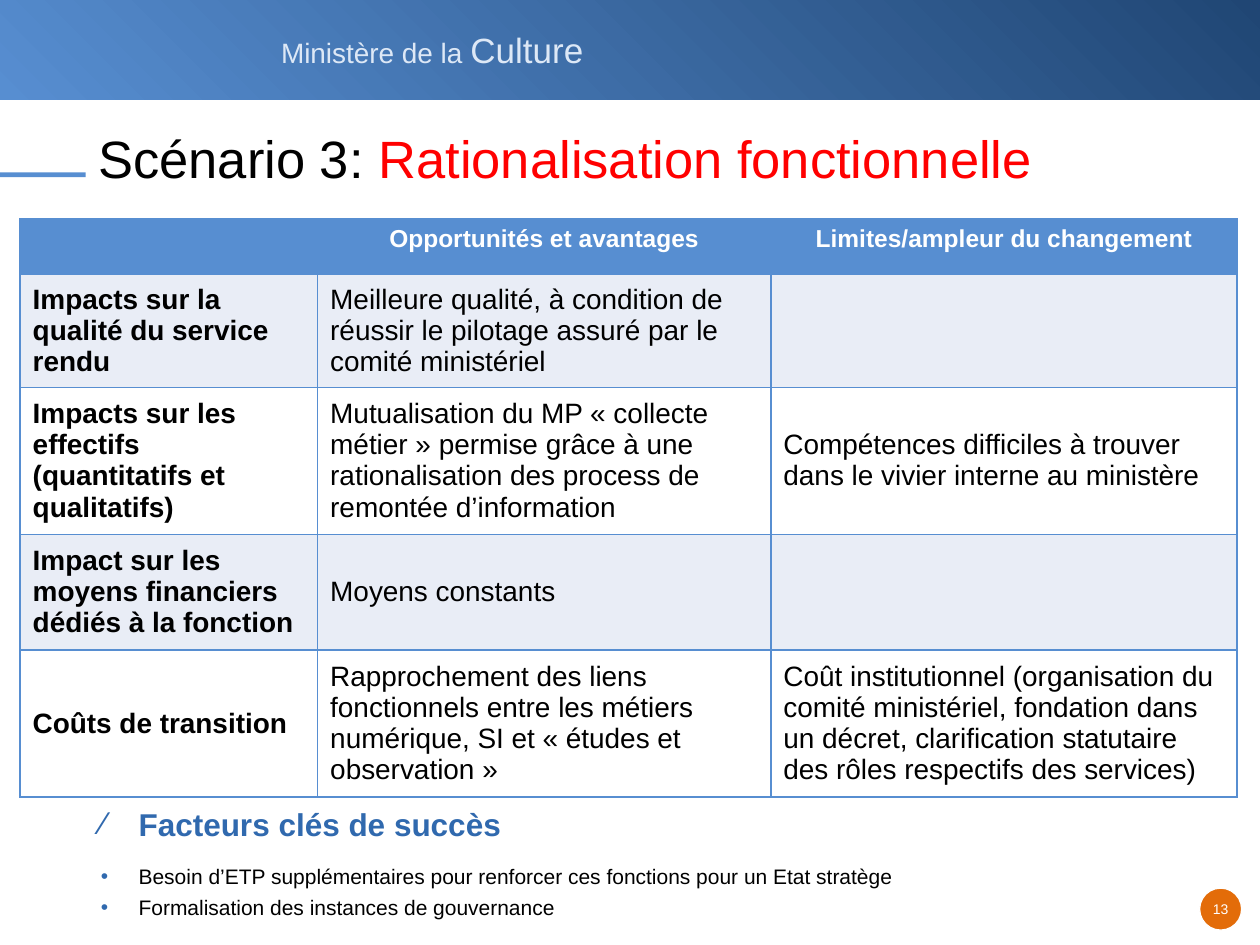
from dataclasses import dataclass

from lxml import etree
from pptx import Presentation
from pptx.dml.color import RGBColor
from pptx.enum.shapes import MSO_SHAPE as Preset
from pptx.enum.text import MSO_ANCHOR as Anchor, MSO_AUTO_SIZE as AutoSize, PP_ALIGN as Align
from pptx.oxml.ns import qn
from pptx.util import Pt


@dataclass(frozen=True)
class Theme:
    font: str = "Arial"
    navy: str = "204674"
    blue: str = "578ED1"
    accent: str = "3069AE"
    pale: str = "DDE8F6"
    band: str = "E9EDF6"
    orange: str = "E36C09"
    red: str = "FF0000"
    white: str = "FFFFFF"
    black: str = "000000"
    title_size: int = 30
    ministry_big: int = 20
    factors_size: int = 18
    body_size: int = 16
    header_size: int = 14
    list_size: int = 12
    number_size: int = 8


theme = Theme()


def style(font, size, color, bold=False):
    font.name, font.size, font.bold = theme.font, Pt(size), bold
    font.color.rgb = RGBColor.from_string(color)


def plain_shape(preset, left, top, width, height, color):
    shape = slide.shapes.add_shape(preset, Pt(left), Pt(top), Pt(width), Pt(height))
    shape.shadow.inherit = False
    shape.fill.solid()
    shape.fill.fore_color.rgb = RGBColor.from_string(color)
    shape.line.fill.background()
    return shape


deck = Presentation()
deck.slide_width, deck.slide_height = Pt(720), Pt(540)
slide = deck.slides.add_slide(deck.slide_layouts[1])

# Banner with the ministry name
banner = plain_shape(Preset.RECTANGLE, 0, 0, 720, 57, theme.navy)
banner.fill.gradient()
banner.fill.gradient_angle = 225
for stop, color in zip(banner.fill.gradient_stops, (theme.navy, theme.blue)):
    stop.color.rgb = RGBColor.from_string(color)

ministry = slide.shapes.add_textbox(Pt(153.5), Pt(13), Pt(187), Pt(31)).text_frame
ministry.word_wrap = False
for words, size in (("Ministère de la ", theme.body_size), ("Culture", theme.ministry_big)):
    run = ministry.paragraphs[0].add_run()
    run.text = words
    style(run.font, size, theme.pale)

# Title and its side rule
plain_shape(Preset.RECTANGLE, 0, 98.5, 49, 2.8, theme.blue)

title = slide.shapes.title
title.left, title.top, title.width, title.height = Pt(49), Pt(76.3), Pt(639.4), Pt(58.3)
title.text_frame.vertical_anchor = Anchor.TOP
title.text_frame.auto_size = AutoSize.NONE
heading = title.text_frame.paragraphs[0]
heading.alignment = Align.LEFT
heading.line_spacing = Pt(28)
for words, color in (("Scénario 3: ", theme.black), ("Rationalisation fonctionnelle", theme.red)):
    run = heading.add_run()
    run.text = words
    style(run.font, theme.title_size, color)

# Page number
badge = plain_shape(Preset.OVAL, 685.5, 507.5, 24, 24, theme.orange)
badge.line.color.rgb = RGBColor.from_string(theme.white)
badge.line.width = Pt(0.75)
number = slide.shapes.add_textbox(Pt(676), Pt(511), Pt(43), Pt(17)).text_frame
number.margin_left = number.margin_right = Pt(3.6)
number.word_wrap = False
number.text = "13"
number.paragraphs[0].alignment = Align.CENTER
style(number.paragraphs[0].font, theme.number_size, theme.white)

# Impact table
impacts = [
    ("", "Opportunités et avantages", "Limites/ampleur du changement"),
    ("Impacts sur la qualité du service rendu",
     "Meilleure qualité, à condition de réussir le pilotage assuré par le comité ministériel", ""),
    ("Impacts sur les effectifs (quantitatifs et qualitatifs)",
     "Mutualisation du MP « collecte métier » permise grâce à une rationalisation des process "
     "de remontée d’information",
     "Compétences difficiles à trouver dans le vivier interne au ministère"),
    ("Impact sur les moyens financiers dédiés à la fonction", "Moyens constants", ""),
    ("Coûts de transition",
     "Rapprochement des liens fonctionnels entre les métiers numérique, SI et "
     "« études et observation »",
     "Coût institutionnel (organisation du comité ministériel, fondation dans un décret, "
     "clarification statutaire des rôles respectifs des services)"),
]
column_widths = (170, 259, 266.5)
row_heights = (31.5, 46.8, 46.8, 66.2, 39.6)
table = slide.shapes.add_table(len(impacts), len(column_widths), Pt(11.5), Pt(125),
                               Pt(sum(column_widths)), Pt(sum(row_heights))).table
for column, width in zip(table.columns, column_widths):
    column.width = Pt(width)
for row, height in zip(table.rows, row_heights):
    row.height = Pt(height)

for r, texts in enumerate(impacts):
    is_header = r == 0
    fill = theme.blue if is_header else theme.band if r % 2 else theme.white
    for c, words in enumerate(texts):
        cell = table.cell(r, c)
        cell.text = words
        cell.vertical_anchor = Anchor.TOP if is_header else Anchor.MIDDLE
        cell.fill.solid()
        cell.fill.fore_color.rgb = RGBColor.from_string(fill)
        paragraph = cell.text_frame.paragraphs[0]
        if is_header:
            paragraph.alignment = Align.CENTER
            style(paragraph.font, theme.header_size, theme.white, True)
        else:
            style(paragraph.font, theme.body_size, theme.black, c == 0)
        # Cell borders come before the fill
        properties = cell._tc.get_or_add_tcPr()
        for position, side in enumerate(("lnL", "lnR", "lnT", "lnB")):
            border = etree.Element(qn(f"a:{side}"), w=str(Pt(0.96)))
            solid = etree.SubElement(border, qn("a:solidFill"))
            etree.SubElement(solid, qn("a:srgbClr"), val=theme.blue)
            properties.insert(position, border)

# Key success factors
factors = slide.placeholders[1]
factors.left, factors.top, factors.width, factors.height = Pt(50.4), Pt(456.5), Pt(639.4), Pt(77.8)
factors.text_frame.auto_size = AutoSize.NONE
factors.text_frame.vertical_anchor = Anchor.TOP
factor_lines = [
    ("Facteurs clés de succès", "⁄", 12, theme.factors_size, theme.accent, True),
    ("Besoin d’ETP supplémentaires pour renforcer ces fonctions pour un Etat stratège",
     "•", 3, theme.list_size, theme.black, False),
    ("Formalisation des instances de gouvernance", "•", 3, theme.list_size, theme.black, False),
]
factors.text_frame.text = "\n".join(line[0] for line in factor_lines)
for paragraph, (_, mark, after, size, color, bold) in zip(factors.text_frame.paragraphs, factor_lines):
    paragraph.space_before, paragraph.space_after = Pt(0), Pt(after)
    properties = paragraph._p.get_or_add_pPr()
    properties.set("marL", str(Pt(21.6)))
    properties.set("indent", str(Pt(-21.6)))
    bullet_color = etree.SubElement(properties, qn("a:buClr"))
    etree.SubElement(bullet_color, qn("a:srgbClr"), val=theme.accent)
    etree.SubElement(properties, qn("a:buFont"), typeface=theme.font)
    etree.SubElement(properties, qn("a:buChar"), char=mark)
    style(paragraph.font, size, color, bold)

deck.save("out.pptx")
